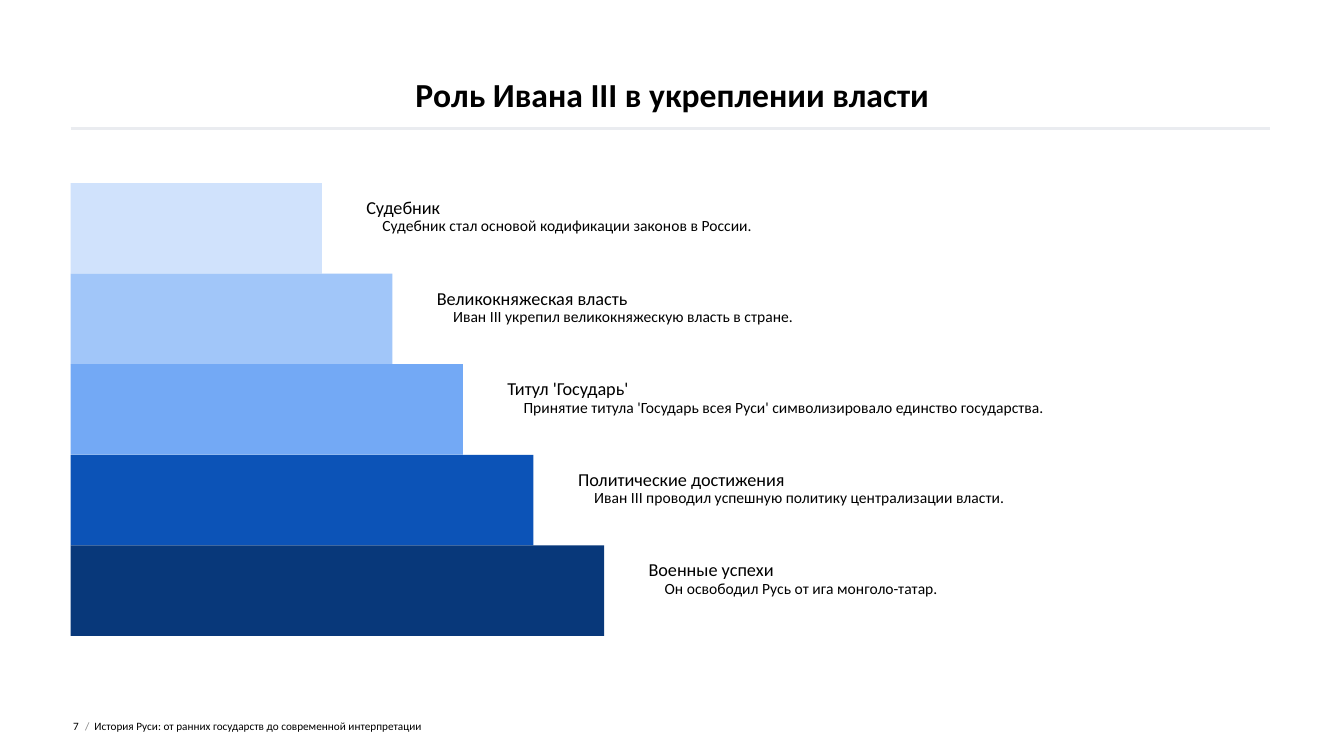
from lxml.etree import SubElement
from pptx import Presentation
from pptx.dml.color import RGBColor
from pptx.enum.shapes import MSO_CONNECTOR as Link, MSO_SHAPE as Form
from pptx.enum.text import MSO_ANCHOR as Anchor, MSO_AUTO_SIZE as Fit, PP_ALIGN as Align
from pptx.oxml.ns import qn
from pptx.util import Pt

FONT = "Calibri"
COLORS = {"text": "000000", "slash": "808080", "rule": "EAECF0"}
STEPS = [
    ("D0E2FC", "Судебник", "Судебник стал основой кодификации законов в России."),
    ("A1C6F9", "Великокняжеская власть", "Иван III укрепил великокняжескую власть в стране."),
    ("73A9F5", "Титул 'Государь'",
     "Принятие титула 'Государь всея Руси' символизировало единство государства."),
    ("0C53B7", "Политические достижения",
     "Иван III проводил успешную политику централизации власти."),
    ("08387A", "Военные успехи", "Он освободил Русь от ига монголо-татар."),
]
LEFT, TOP = 50.4, 130.75
WIDTH, HEIGHT, GROWTH = 179.5, 64.7, 50.4


def set_frame(frame, anchor):
    """Clear the margins and fix the wrapping and anchor of a text frame."""
    frame.margin_left = frame.margin_right = frame.margin_top = frame.margin_bottom = 0
    frame.word_wrap = True
    frame.auto_size = Fit.NONE
    frame.vertical_anchor = anchor


def add_run(para, text, size, color="text", bold=False):
    """Append one styled run to a paragraph."""
    run = para.add_run()
    run.text = text
    run.font.name, run.font.size, run.font.bold = FONT, Pt(size), bold
    run.font.color.rgb = RGBColor.from_string(COLORS[color])


def add_box(slide, x, y, w, h, anchor=Anchor.MIDDLE):
    """Add an empty text box and return its frame."""
    frame = slide.shapes.add_textbox(Pt(x), Pt(y), Pt(w), Pt(h)).text_frame
    set_frame(frame, anchor)
    return frame


def add_title(slide, text):
    """Place and fill the title placeholder."""
    title = slide.shapes.title
    title.left, title.top, title.width, title.height = Pt(LEFT), Pt(0), Pt(859.7), Pt(81.4)
    set_frame(title.text_frame, Anchor.BOTTOM)
    para = title.text_frame.paragraphs[0]
    para.alignment, para.space_before = Align.CENTER, Pt(10)
    add_run(para, text, 24, bold=True)


def add_rule(slide, y):
    """Draw the line under the title."""
    rule = slide.shapes.add_connector(Link.STRAIGHT, Pt(LEFT), Pt(y), Pt(907.2), Pt(y))
    rule.line.color.rgb = RGBColor.from_string(COLORS["rule"])
    rule.line.width = Pt(2)
    SubElement(rule._element.spPr, qn("a:effectLst"))


def add_step(slide, row, color, head, body):
    """Draw one step of the pyramid with its heading and detail."""
    y, width = TOP + row * HEIGHT, WIDTH + row * GROWTH
    bar = slide.shapes.add_shape(Form.RECTANGLE, Pt(LEFT), Pt(y), Pt(width), Pt(HEIGHT))
    bar.shadow.inherit = False
    bar.fill.solid()
    bar.fill.fore_color.rgb = RGBColor.from_string(color)
    bar.line.fill.background()
    frame = add_box(slide, LEFT + width + 31.8, y + 11.3, 417.6, 43.2, Anchor.TOP)
    first, second = frame.paragraphs[0], frame.add_paragraph()
    first.line_spacing = second.line_spacing = 0.9
    add_run(first, head, 13)
    props = second._p.get_or_add_pPr()
    props.set("marL", str(Pt(11.5)))
    props.set("indent", "0")
    add_run(second, body, 11.1)


def add_note(slide, x, w, text, color="text", align=Align.LEFT, before=10):
    """Add one piece of the footer."""
    para = add_box(slide, x, 497, w, 43).paragraphs[0]
    para.alignment, para.space_before = align, Pt(before)
    add_run(para, text, 8, color)


def main():
    """Build and save the slide."""
    deck = Presentation()
    deck.slide_width, deck.slide_height = Pt(960), Pt(540)
    slide = deck.slides.add_slide(deck.slide_layouts[5])
    add_title(slide, "Роль Ивана III в укреплении власти")
    add_rule(slide, 91.6)
    for row, step in enumerate(STEPS):
        add_step(slide, row, *step)
    add_note(slide, 34, 22.4, "7", align=Align.RIGHT)
    add_note(slide, 59, 8.6, " /", "slash", before=0)
    add_note(slide, 67.5, 620, "История Руси: от ранних государств до современной интерпретации")
    deck.save("out.pptx")


if __name__ == "__main__":
    main()
